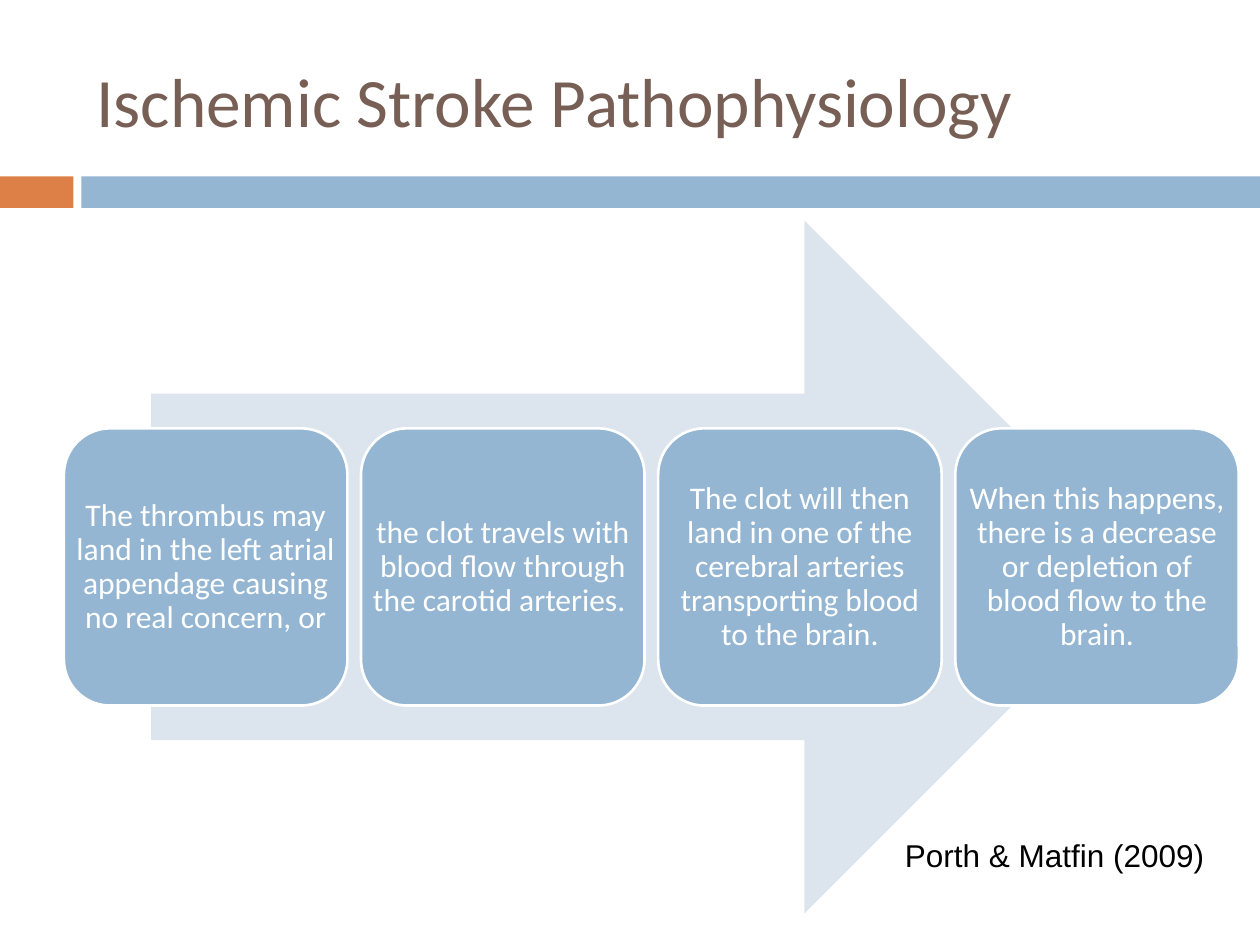
from pptx import Presentation
from pptx.dml.color import RGBColor
from pptx.enum.shapes import MSO_SHAPE
from pptx.enum.text import MSO_ANCHOR, PP_ALIGN
from pptx.util import Pt

RECT = MSO_SHAPE.RECTANGLE
ROUND = MSO_SHAPE.ROUNDED_RECTANGLE
ARROW = MSO_SHAPE.RIGHT_ARROW
TOP, MIDDLE = MSO_ANCHOR.TOP, MSO_ANCHOR.MIDDLE
LEFT, CENTER = PP_ALIGN.LEFT, PP_ALIGN.CENTER

BLUE = RGBColor(0x94, 0xB6, 0xD2)
PALE = RGBColor(0xDC, 0xE5, 0xEE)
ORANGE = RGBColor(0xDD, 0x80, 0x47)
BROWN = RGBColor(0x77, 0x5F, 0x55)
WHITE = RGBColor(0xFF, 0xFF, 0xFF)
BLACK = RGBColor(0, 0, 0)

STEPS = [
    "The thrombus may land in the left atrial appendage causing no real concern, or",
    "the clot travels with blood flow through the carotid arteries. ",
    "The clot will then land in one of the cerebral arteries transporting blood to the brain.",
    "When this happens, there is a decrease or depletion of blood flow to the brain.",
]


def assign(item, values):
    for name, value in values.items():
        setattr(item, name, value)


class Deck:
    title = {"size": Pt(39.6), "name": "Calibri"}
    body = {"size": Pt(18), "name": "Calibri"}
    cite = {"size": Pt(18), "name": "Arial"}
    tight = {f"margin_{side}": Pt(5) for side in ("left", "top", "right", "bottom")}

    def __init__(self, wide, high):
        self.file = Presentation()
        assign(self.file, {"slide_width": Pt(wide), "slide_height": Pt(high)})
        self.slide = self.file.slides.add_slide(self.file.slide_layouts[6])

    def shape(self, kind, area, fill, line=None):
        item = self.slide.shapes.add_shape(kind, *map(Pt, area))
        item.shadow.inherit = False
        item.fill.solid()
        item.fill.fore_color.rgb = fill
        if line is None:
            item.line.fill.background()
        else:
            item.line.color.rgb = line
            item.line.width = Pt(1.5)

    def text(self, words, area, font, color, anchor=MIDDLE, align=LEFT, space=1.0, inset=None):
        frame = self.slide.shapes.add_textbox(*map(Pt, area)).text_frame
        assign(frame, {"word_wrap": True, "vertical_anchor": anchor, **(inset or {})})
        para = frame.paragraphs[0]
        assign(para, {"alignment": align, "line_spacing": space})
        run = para.add_run()
        run.text = words
        assign(run.font, font)
        run.font.color.rgb = color

    def step(self, words, area):
        self.shape(ROUND, area, BLUE, WHITE)
        self.text(words, area, self.body, WHITE, align=CENTER, space=0.9, inset=self.tight)


def main():
    deck = Deck(720, 540)
    deck.shape(RECT, (0, 100.8, 42, 18), ORANGE)
    deck.shape(RECT, (46.5, 100.8, 673.5, 18), BLUE)
    deck.text("Ischemic Stroke Pathophysiology", (48, 18, 642, 78), deck.title, BROWN)
    deck.shape(ARROW, (86.4, 126, 571.2, 396), PALE)
    for index, words in enumerate(STEPS):
        deck.step(words, (36.5 + 169.8 * index, 244.8, 162, 158.4))
    deck.text("Porth & Matfin (2009)", (510, 474, 192, 29), deck.cite, BLACK, TOP)
    deck.file.save("out.pptx")


if __name__ == "__main__":
    main()
